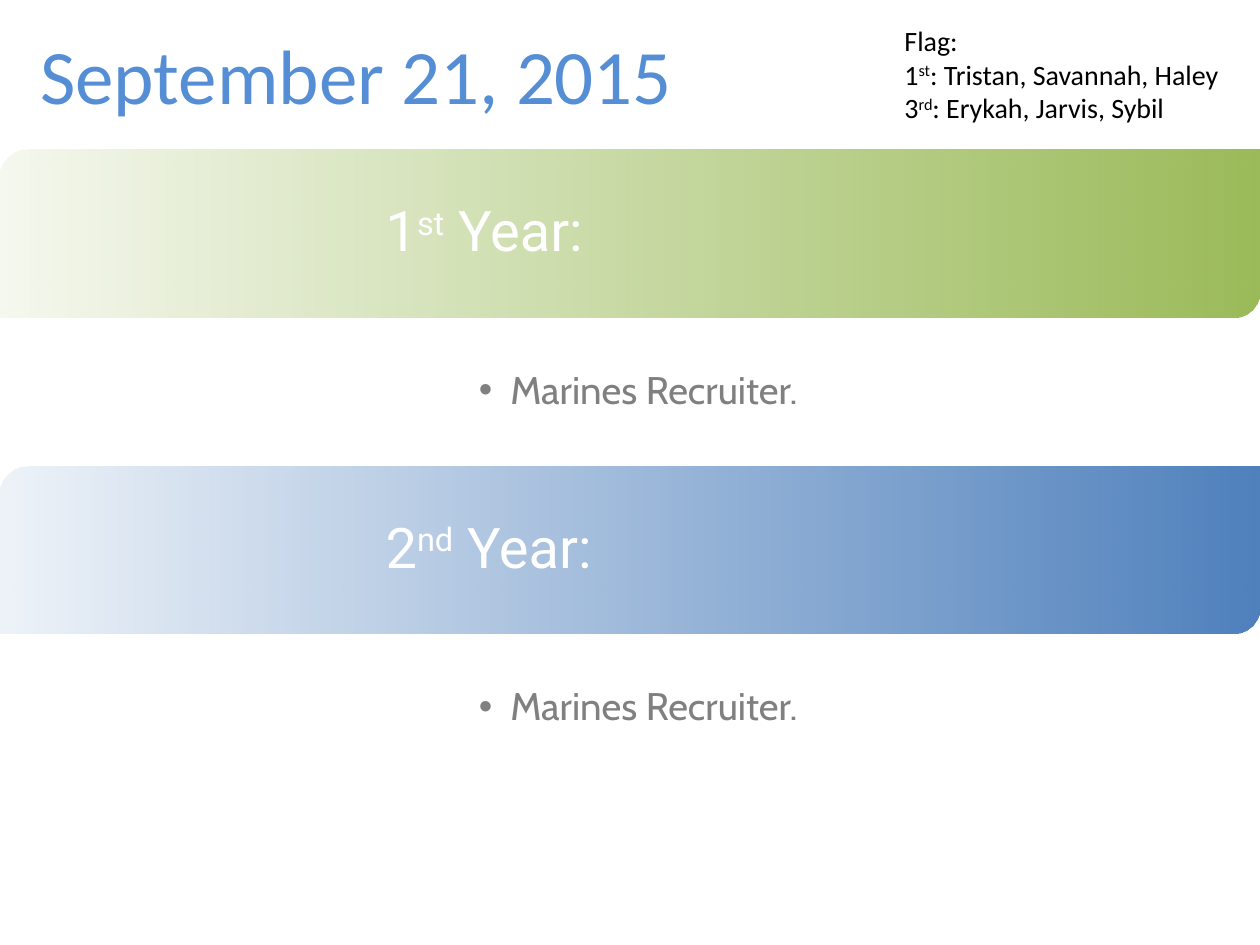
from lxml import etree
from pptx import Presentation
from pptx.dml.color import RGBColor
from pptx.enum.shapes import MSO_SHAPE
from pptx.enum.text import MSO_ANCHOR, MSO_AUTO_SIZE, PP_ALIGN
from pptx.oxml.ns import qn
from pptx.util import Inches, Pt

BAND_SHAPE = MSO_SHAPE.ROUND_2_DIAG_RECTANGLE
MIDDLE, TOP = MSO_ANCHOR.MIDDLE, MSO_ANCHOR.TOP
NO_FIT = MSO_AUTO_SIZE.NONE
CENTER, LEFT = PP_ALIGN.CENTER, PP_ALIGN.LEFT

GREEN = RGBColor(0x9B, 0xBB, 0x59)
BLUE = RGBColor(0x4F, 0x81, 0xBD)
TITLE_BLUE = RGBColor(0x55, 0x8E, 0xD5)
GRAY = RGBColor(0x80, 0x80, 0x80)
WHITE = RGBColor(0xFF, 0xFF, 0xFF)
BLACK = RGBColor(0, 0, 0)

TITLE = "September 21, 2015"
FLAG_DUTY = [
    ["Flag:"],
    ["1", "st", ": Tristan, Savannah, Haley"],
    ["3", "rd", ": Erykah, Jarvis, Sybil"],
]
YEARS = [
    (["1", "st", " Year:"], ["Marines Recruiter."], GREEN),
    (["2", "nd", " Year:"], ["Marines Recruiter."], BLUE),
]

WIDTH, HEIGHT = 10, 7.5
FIRST_BAND_TOP = 1.19
BAND_HEIGHT, LIST_HEIGHT = 1.33, 1.18
HEADING_MARGIN = 0.06
BULLET_INDENT = 0.25
ORDINALS = ("st", "nd", "rd")


def place(shape, left, top, width, height):
    shape.left, shape.top = Inches(left), Inches(top)
    shape.width, shape.height = Inches(width), Inches(height)


def write(shape, paragraphs, *, font, size, color, anchor=MIDDLE, align=LEFT,
          insets=(0.1, 0.05, 0.1, 0.05), line_spacing=1.0, bullet_indent=0):
    frame = shape.text_frame
    frame.word_wrap = True
    frame.auto_size = NO_FIT
    frame.vertical_anchor = anchor
    (frame.margin_left, frame.margin_top,
     frame.margin_right, frame.margin_bottom) = map(Inches, insets)
    for index, pieces in enumerate(paragraphs):
        para = frame.add_paragraph() if index else frame.paragraphs[0]
        para.alignment = align
        para.line_spacing = line_spacing
        para.space_before = Pt(0)
        if bullet_indent:
            properties = para._p.get_or_add_pPr()
            properties.set("marL", str(Inches(bullet_indent)))
            properties.set("indent", str(-Inches(bullet_indent)))
        for piece in pieces:
            span = para.add_run()
            span.text = piece
            span.font.name = font
            span.font.size = Pt(size)
            span.font.color.rgb = color
            if piece in ORDINALS:
                span._r.get_or_add_rPr().set("baseline", "30000")


def add_band(page, top, color):
    band = page.shapes.add_shape(
        BAND_SHAPE, 0, Inches(top), Inches(WIDTH), Inches(BAND_HEIGHT))
    band.shadow.inherit = False
    band.line.fill.background()
    band.fill.gradient()
    band.fill.gradient_angle = 0
    for stop, position in zip(band.fill.gradient_stops, (0, 1)):
        stop.color.rgb = color
        stop.position = position
    first_color = band._element.spPr.find(".//" + qn("a:srgbClr"))
    etree.SubElement(first_color, qn("a:alpha")).set("val", "10000")


def add_text_box(page, left, top, width, height, paragraphs, **style):
    box = page.shapes.add_textbox(0, 0, 0, 0)
    place(box, left, top, width, height)
    write(box, paragraphs, **style)


def main():
    deck = Presentation()
    deck.slide_width, deck.slide_height = Inches(WIDTH), Inches(HEIGHT)
    page = deck.slides.add_slide(deck.slide_layouts[3])
    title, *lists = page.placeholders

    place(title, 0.04, 0, 5.58, 1.17)
    write(title, [[TITLE]], font="Calibri", size=44, color=TITLE_BLUE, align=CENTER)
    add_text_box(page, 7.08, 0.14, 2.92, 0.94, FLAG_DUTY,
                 font="Calibri", size=16, color=BLACK, anchor=TOP)

    for row, (heading, items, color) in enumerate(YEARS):
        top = FIRST_BAND_TOP + row * (BAND_HEIGHT + LIST_HEIGHT)
        add_band(page, top, color)
        add_text_box(page, HEADING_MARGIN, top + HEADING_MARGIN,
                     WIDTH - 2 * HEADING_MARGIN, BAND_HEIGHT - 2 * HEADING_MARGIN,
                     [heading], font="Roboto", size=32, color=WHITE,
                     insets=(3, 0.13, 0.13, 0.13), line_spacing=0.9)
        place(lists[row], 0, top + BAND_HEIGHT, WIDTH, LIST_HEIGHT)
        write(lists[row], [[item] for item in items], font="Cabin", size=22, color=GRAY,
              insets=(3.8, 0.2, 0.17, 0.2), line_spacing=0.9,
              bullet_indent=BULLET_INDENT)

    deck.save("out.pptx")


if __name__ == "__main__":
    main()
